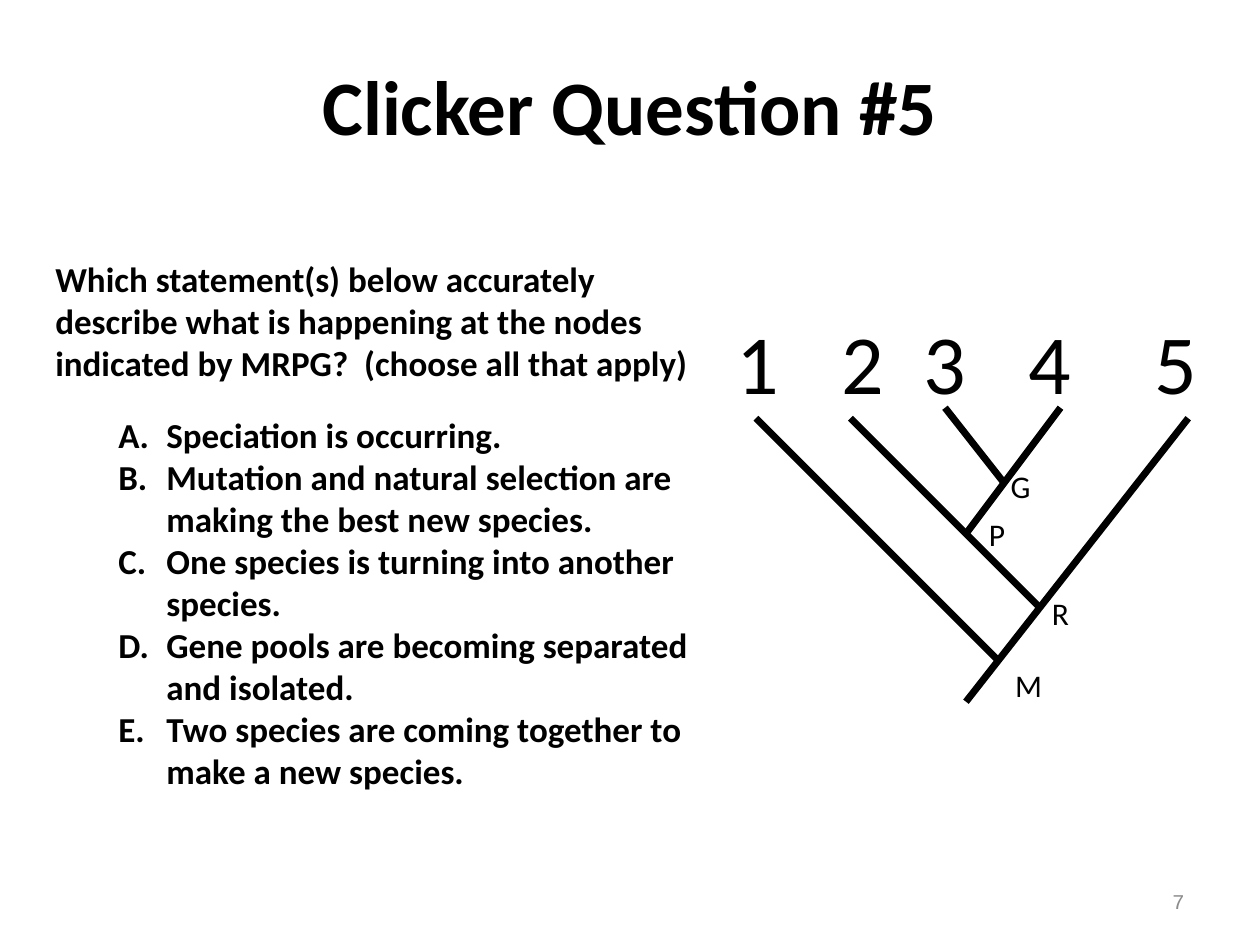
from dataclasses import dataclass

from lxml import etree
from pptx import Presentation
from pptx.dml.color import RGBColor
from pptx.enum import shapes, text
from pptx.oxml import ns
from pptx.util import Pt


@dataclass(frozen=True)
class Theme:
    font: str = "Calibri"
    number_font: str = "Courier New"
    ink: str = "000000"
    paper: str = "FFFFFF"
    muted: str = "8C8C8C"
    title: int = 44
    tip: int = 48
    body: int = 20
    node: int = 18
    number: int = 12
    branch: int = 4


THEME = Theme()
ALIGN = text.PP_ALIGN
ANCHOR = text.MSO_ANCHOR

QUESTION = ("Which statement(s) below accurately describe what is happening "
            "at the nodes indicated by MRPG?  (choose all that apply)")
ANSWERS = [
    "Speciation is occurring.",
    "Mutation and natural selection are making the best new species.",
    "One species is turning into another species.",
    "Gene pools are becoming separated and isolated.",
    "Two species are coming together to make a new species.",
]

# Tree geometry, relative to the tree's box
TIP_CENTRES = [31, 91, 138, 198, 270]
BRANCHES = [
    ((150, 227), (277, 65)),    # root to 5
    ((192, 173), (84, 65)),     # R to 2
    ((150, 131), (204, 59)),    # P to 4
    ((171, 101), (138, 59)),    # G to 3
    ((168, 203), (30, 65)),     # M to 1
]
NODE_LABELS = {"G": (168.5, 89.5), "P": (156, 117),
               "R": (192, 162), "M": (171, 203)}


def format_text(paragraph, words, size, font=THEME.font, color=THEME.ink,
                bold=False, align=ALIGN.LEFT, before=0):
    paragraph.alignment = align
    paragraph.space_before = Pt(before)
    run = paragraph.add_run()
    run.text = words
    run.font.name = font
    run.font.size = Pt(size)
    run.font.bold = bold
    run.font.color.rgb = RGBColor.from_string(color)


def add_box(slide, left, top, width, height, anchor=ANCHOR.TOP):
    box = slide.shapes.add_textbox(Pt(left), Pt(top), Pt(width), Pt(height))
    box.text_frame.word_wrap = True
    box.text_frame.vertical_anchor = anchor
    return box


def add_letter(paragraph, margin=63.5, hang=27.5):
    props = paragraph._p.get_or_add_pPr()
    props.set("marL", str(Pt(margin)))
    props.set("indent", str(-Pt(hang)))
    etree.SubElement(props, ns.qn("a:buFont"), typeface="+mj-lt")
    etree.SubElement(props, ns.qn("a:buAutoNum"), type="alphaUcPeriod")


def add_centre_tabs(paragraph, positions):
    tabs = etree.SubElement(paragraph._p.get_or_add_pPr(), ns.qn("a:tabLst"))
    for position in positions:
        etree.SubElement(tabs, ns.qn("a:tab"), pos=str(Pt(position)), algn="ctr")


def place_title(slide, left, top, width, height):
    title = slide.shapes.title
    title.left, title.top = Pt(left), Pt(top)
    title.width, title.height = Pt(width), Pt(height)
    title.text_frame.vertical_anchor = ANCHOR.MIDDLE
    format_text(title.text_frame.paragraphs[0], "Clicker Question #5",
                THEME.title, bold=True, align=ALIGN.CENTER)


def place_question(slide, left, top, width, height):
    frame = add_box(slide, left, top, width, height).text_frame
    format_text(frame.paragraphs[0], QUESTION, THEME.body, bold=True)
    for index, answer in enumerate(ANSWERS):
        paragraph = frame.add_paragraph()
        paragraph.level = 1
        format_text(paragraph, answer, THEME.body, bold=True,
                    before=0 if index else 17)
        add_letter(paragraph)


def add_branch(slide, left, top, start, end):
    branch = slide.shapes.add_connector(
        shapes.MSO_CONNECTOR.STRAIGHT,
        Pt(left + start[0]), Pt(top + start[1]),
        Pt(left + end[0]), Pt(top + end[1]))
    branch.line.color.rgb = RGBColor.from_string(THEME.ink)
    branch.line.width = Pt(THEME.branch)
    etree.SubElement(branch._element.spPr, ns.qn("a:effectLst"))


def place_tree(slide, left, top, width):
    # Species numbers over the branch tips
    tips = add_box(slide, left, top, width, 65)
    paragraph = tips.text_frame.paragraphs[0]
    format_text(paragraph, "\t1\t2\t3\t4\t5", THEME.tip)
    inset = tips.text_frame.margin_left.pt
    add_centre_tabs(paragraph, [centre - inset for centre in TIP_CENTRES])

    # Node letters
    for letter, (x, y) in NODE_LABELS.items():
        label = add_box(slide, left + x, top + y, 36, 29)
        label.fill.solid()
        label.fill.fore_color.rgb = RGBColor.from_string(THEME.paper)
        format_text(label.text_frame.paragraphs[0], letter, THEME.node)

    # Branches
    for start, end in BRANCHES:
        add_branch(slide, left, top, start, end)


def place_slide_number(slide, left, top, width, height):
    number = add_box(slide, left, top, width, height, ANCHOR.MIDDLE)
    format_text(number.text_frame.paragraphs[0], "7", THEME.number,
                font=THEME.number_font, color=THEME.muted, align=ALIGN.RIGHT)


def main():
    deck = Presentation()
    deck.slide_width, deck.slide_height = Pt(720), Pt(540)
    slide = deck.slides.add_slide(deck.slide_layouts.get_by_name("Title Only"))
    place_tree(slide, 402, 174, 318)
    place_question(slide, 24.5, 143.5, 378, 322.5)
    place_title(slide, 0, 0, 720, 120)
    place_slide_number(slide, 516, 500.5, 168, 29)
    deck.save("out.pptx")


if __name__ == "__main__":
    main()
